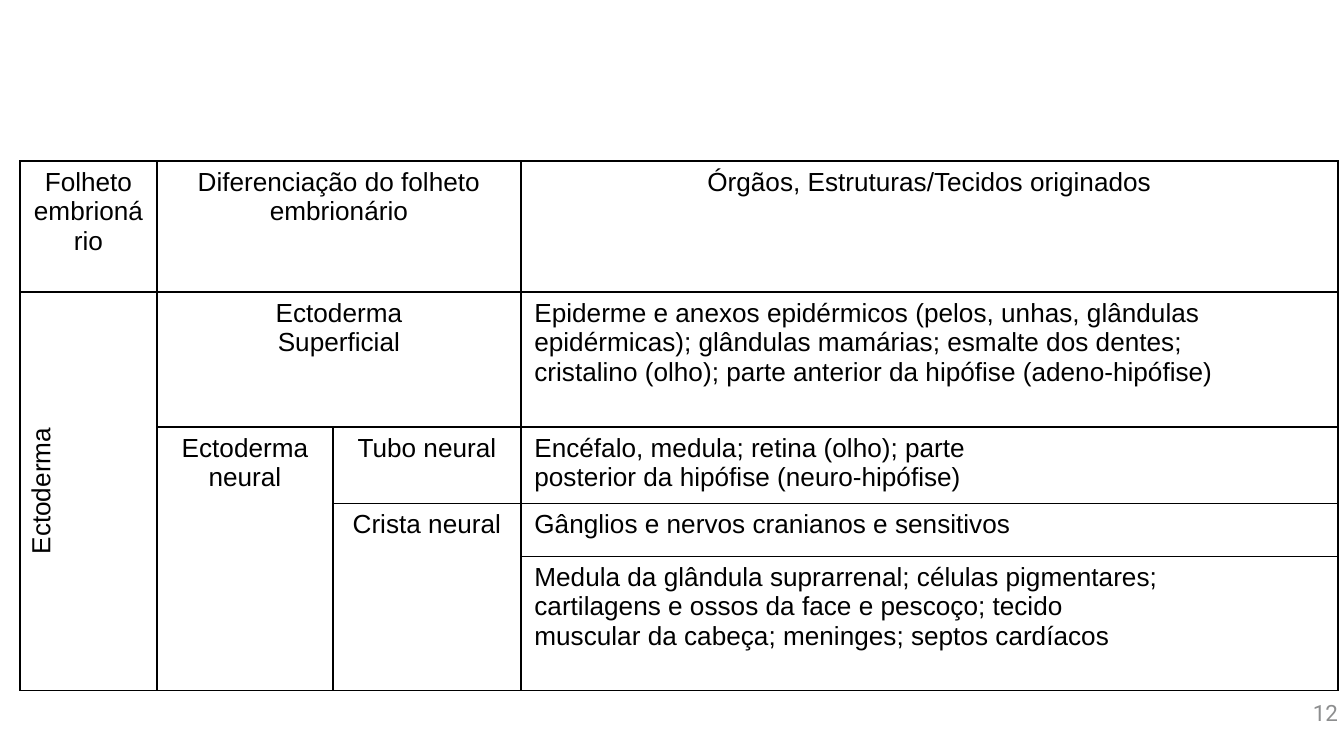
import dataclasses

import lxml.etree
import pptx
import pptx.dml.color
import pptx.enum.text
import pptx.oxml.ns
import pptx.table
import pptx.util

EMU_PER_PX = 914400 / 134.4
BLACK = pptx.dml.color.RGBColor(0x00, 0x00, 0x00)
WHITE = pptx.dml.color.RGBColor(0xFF, 0xFF, 0xFF)
GRAY = pptx.dml.color.RGBColor(0x8D, 0x8E, 0x8F)
CENTER = pptx.enum.text.PP_ALIGN.CENTER
JUSTIFY = pptx.enum.text.PP_ALIGN.JUSTIFY
RIGHT = pptx.enum.text.PP_ALIGN.RIGHT

TABLE_FONT = {"name": "Arial", "size": pptx.util.Pt(14), "bold": False}
NUMBER_FONT = {"name": "Roboto", "size": pptx.util.Pt(12)}
COLUMN_WIDTHS = (137, 176, 188, 817)
ROW_HEIGHTS = (131, 135, 73, 53, 134)


@dataclasses.dataclass(frozen=True)
class TableEntry:
    row: int
    column: int
    text: str
    alignment: pptx.enum.text.PP_ALIGN = CENTER
    row_span: int = 1
    column_span: int = 1
    vertical: bool = False


ENTRIES = (
    # Header
    TableEntry(0, 0, "Folheto\nembrionário"),
    TableEntry(0, 1, "Diferenciação do folheto\nembrionário", column_span=2),
    TableEntry(0, 3, "Órgãos, Estruturas/Tecidos originados"),
    # Germ layer and its differentiation
    TableEntry(1, 0, "Ectoderma", row_span=4, vertical=True),
    TableEntry(1, 1, "Ectoderma\nSuperficial", column_span=2),
    TableEntry(2, 1, "Ectoderma\nneural", row_span=3),
    TableEntry(2, 2, "Tubo neural"),
    TableEntry(3, 2, "Crista neural", row_span=2),
    # Organs and tissues
    TableEntry(1, 3, "Epiderme e anexos epidérmicos (pelos, unhas, glândulas\n"
               "epidérmicas); glândulas mamárias; esmalte dos dentes;\n"
               "cristalino (olho); parte anterior da hipófise (adeno-hipófise)", JUSTIFY),
    TableEntry(2, 3, "Encéfalo, medula; retina (olho); parte\n"
               "posterior da hipófise (neuro-hipófise)", JUSTIFY),
    TableEntry(3, 3, "Gânglios e nervos cranianos e sensitivos", JUSTIFY),
    TableEntry(4, 3, "Medula da glândula suprarrenal; células pigmentares;\n"
               "cartilagens e ossos da face e pescoço; tecido\n"
               "muscular da cabeça; meninges; septos cardíacos", JUSTIFY),
)


def px(length: int) -> pptx.util.Emu:
    return pptx.util.Emu(round(length * EMU_PER_PX))


def write_text(text_frame, text: str, alignment, font_format: dict, color) -> None:
    text_frame.text = text
    for paragraph in text_frame.paragraphs:
        paragraph.alignment = alignment
        for run in paragraph.runs:
            for name, value in font_format.items():
                setattr(run.font, name, value)
            run.font.color.rgb = color


def style_cell(cell: pptx.table._Cell) -> None:
    """Give the cell thin borders on all sides and a plain fill."""
    properties = cell._tc.get_or_add_tcPr()
    for side in ("a:lnL", "a:lnR", "a:lnT", "a:lnB"):
        line = lxml.etree.SubElement(properties, pptx.oxml.ns.qn(side),
                                     w=str(pptx.util.Pt(0.75)))
        fill = lxml.etree.SubElement(line, pptx.oxml.ns.qn("a:solidFill"))
        lxml.etree.SubElement(fill, pptx.oxml.ns.qn("a:srgbClr"), val=str(BLACK))
    cell.fill.solid()
    cell.fill.fore_color.rgb = WHITE


def fill_entry(table: pptx.table.Table, entry: TableEntry) -> None:
    cell = table.cell(entry.row, entry.column)
    if entry.row_span > 1 or entry.column_span > 1:
        cell.merge(table.cell(entry.row + entry.row_span - 1,
                              entry.column + entry.column_span - 1))
    write_text(cell.text_frame, entry.text, entry.alignment, TABLE_FONT, BLACK)
    if entry.vertical:
        cell._tc.get_or_add_tcPr().set("vert", "vert270")


def add_tissue_table(slide) -> None:
    table = slide.shapes.add_table(
        len(ROW_HEIGHTS), len(COLUMN_WIDTHS), px(20), px(161),
        px(sum(COLUMN_WIDTHS)), px(sum(ROW_HEIGHTS))).table
    table.first_row = False
    table.horz_banding = False
    for column, width in zip(table.columns, COLUMN_WIDTHS):
        column.width = px(width)
    for row, height in zip(table.rows, ROW_HEIGHTS):
        row.height = px(height)
    for cell in table.iter_cells():
        style_cell(cell)
    for entry in ENTRIES:
        fill_entry(table, entry)


def add_page_number(slide) -> None:
    text_frame = slide.shapes.add_textbox(px(1269), px(699), px(69), px(57)).text_frame
    frame_format = {"word_wrap": True, "margin_left": 0, "margin_right": 0,
                    "margin_top": 0, "margin_bottom": 0}
    for name, value in frame_format.items():
        setattr(text_frame, name, value)
    write_text(text_frame, "12", RIGHT, NUMBER_FONT, GRAY)


def main() -> None:
    presentation = pptx.Presentation()
    presentation.slide_width = px(1344)
    presentation.slide_height = px(756)
    slide = presentation.slides.add_slide(presentation.slide_layouts[6])
    add_page_number(slide)
    add_tissue_table(slide)
    presentation.save("out.pptx")


if __name__ == "__main__":
    main()
